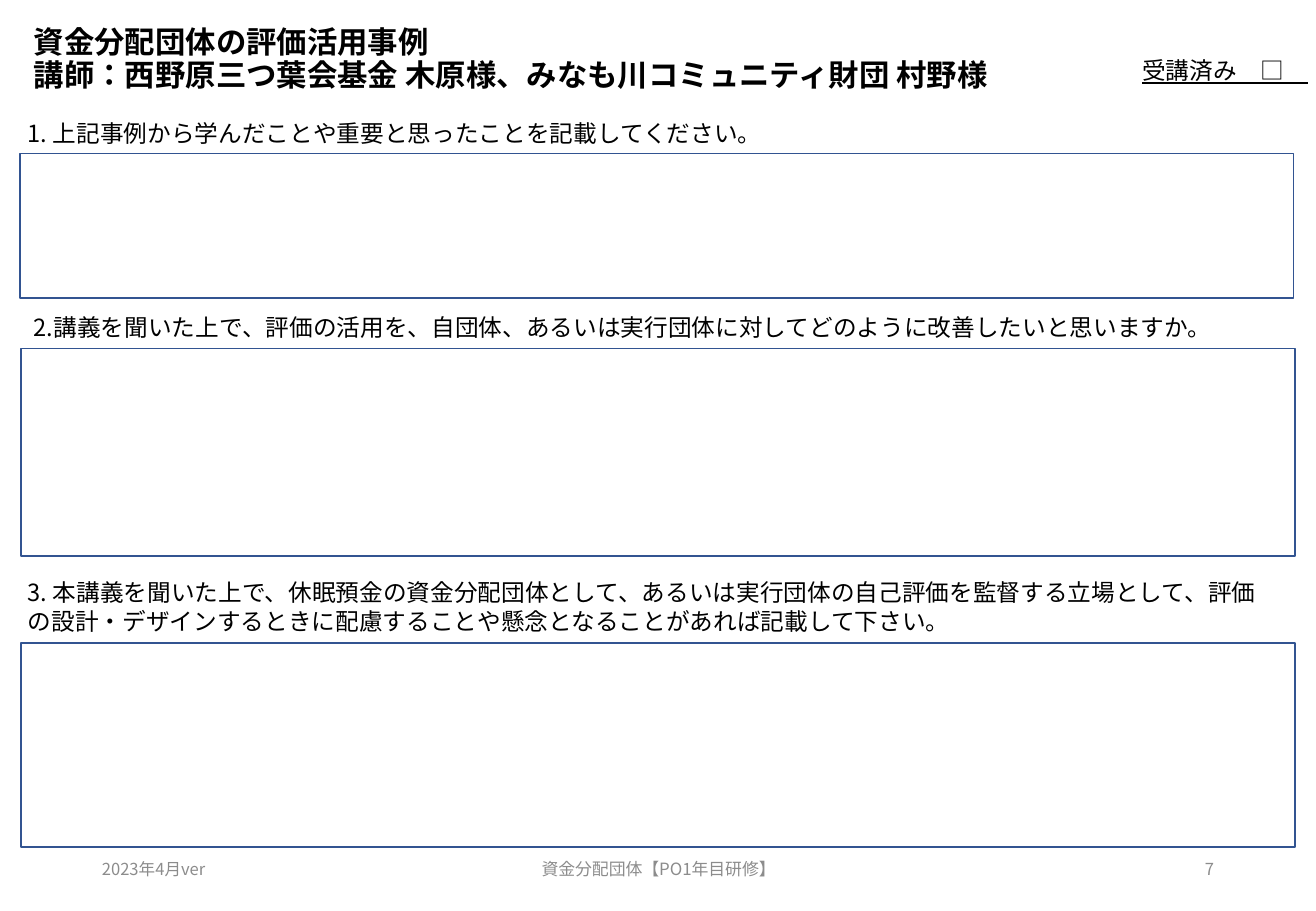
from dataclasses import dataclass

from lxml import etree
from pptx import Presentation, util as u
from pptx.dml.color import RGBColor
from pptx.enum import lang, shapes, text
from pptx.oxml import ns

COLUMNS, ROWS = 108.3, 75


@dataclass(frozen=True)
class Theme:
    font: str = "Noto Sans CJK JP"
    ink: str = "000000"
    muted: str = "8C8C8C"
    paper: str = "FFFFFF"
    frame: str = "325491"
    title: float = 18
    body: float = 14
    footer: float = 10
    small: float = 9.8
    rule: float = 1


def write(frame, content, theme, size, color, bold=False, underline=False,
          align=text.PP_ALIGN.LEFT, anchor=text.MSO_ANCHOR.TOP, spacing=1.0):
    frame.word_wrap = True
    frame.vertical_anchor = anchor
    paragraph = frame.paragraphs[0]
    paragraph.alignment = align
    paragraph.line_spacing = spacing
    for index, line in enumerate(content.splitlines()):
        if index:
            paragraph.add_line_break()
        run = paragraph.add_run()
        run.text = line
        font = run.font
        font.name = theme.font
        font.size = u.Pt(size)
        font.bold = bold
        font.underline = underline
        font.language_id = lang.MSO_LANGUAGE_ID.JAPANESE
        font.color.rgb = RGBColor.from_string(color)
        latin = font._element.find(ns.qn("a:latin"))
        east_asian = etree.Element(ns.qn("a:ea"), typeface=theme.font)
        latin.addnext(east_asian)


class Worksheet:
    def __init__(self, deck, theme):
        self.theme = theme
        self.column = deck.slide_width / COLUMNS
        self.row = deck.slide_height / ROWS
        self.slide = deck.slides.add_slide(deck.slide_layouts[6])

    def place(self, left, top, width, height):
        return (u.Emu(round(left * self.column)), u.Emu(round(top * self.row)),
                u.Emu(round(width * self.column)), u.Emu(round(height * self.row)))

    def label(self, content, area, size, color, **style):
        box = self.slide.shapes.add_textbox(*self.place(*area))
        write(box.text_frame, content, self.theme, size, color, **style)

    def answer_box(self, area):
        box = self.slide.shapes.add_shape(
            shapes.MSO_SHAPE.RECTANGLE, *self.place(*area))
        box.shadow.inherit = False
        box.fill.solid()
        box.fill.fore_color.rgb = RGBColor.from_string(self.theme.paper)
        box.line.color.rgb = RGBColor.from_string(self.theme.frame)
        box.line.width = u.Pt(self.theme.rule)

    def question(self, prompt, prompt_area, answer_area):
        self.answer_box(answer_area)
        self.label(prompt, prompt_area, self.theme.body, self.theme.ink)

    def footer(self, content, left, width, size, align):
        self.label(content, (left, 69.5, width, 4), size, self.theme.muted,
                   align=align, anchor=text.MSO_ANCHOR.MIDDLE)


QUESTIONS = [
    ("1. 上記事例から学んだことや重要と思ったことを記載してください。",
     (1.3, 9.3, 103.9, 3.4), (1.65, 12.65, 104.8, 11.9)),
    ("2.講義を聞いた上で、評価の活用を、自団体、あるいは実行団体に対してどのように改善したいと思いますか。",
     (1.8, 25.3, 104.8, 3.4), (1.75, 28.7, 104.8, 17.1)),
    ("3. 本講義を聞いた上で、休眠預金の資金分配団体として、あるいは実行団体の自己評価を監督する立場として、"
     "評価の設計・デザインするときに配慮することや懸念となることがあれば記載して下さい。",
     (1.3, 47.1, 104.8, 5.7), (1.75, 52.95, 104.8, 16.8)),
]

TITLE = """資金分配団体の評価活用事例
講師：西野原三つ葉会基金 木原様、みなも川コミュニティ財団 村野様"""


def main():
    deck = Presentation()
    deck.slide_width, deck.slide_height = u.Inches(10.83), u.Inches(7.5)
    theme = Theme()
    sheet = Worksheet(deck, theme)

    sheet.label(TITLE, (1.8, 0, 99.2, 9.9), theme.title, theme.ink, bold=True,
                anchor=text.MSO_ANCHOR.MIDDLE, spacing=0.9)
    sheet.label("受講済み　□　", (93, 4.1, 20.1, 3.4), theme.body, theme.ink,
                underline=True)
    for prompt, prompt_area, answer_area in QUESTIONS:
        sheet.question(prompt, prompt_area, answer_area)

    sheet.footer("2023年4月ver", 7.4, 24.4, theme.small, text.PP_ALIGN.LEFT)
    sheet.footer("資金分配団体【PO1年目研修】", 35.9, 36.6, theme.footer,
                 text.PP_ALIGN.CENTER)
    sheet.footer("7", 76.5, 24.4, theme.small, text.PP_ALIGN.RIGHT)
    deck.save("out.pptx")


if __name__ == "__main__":
    main()
